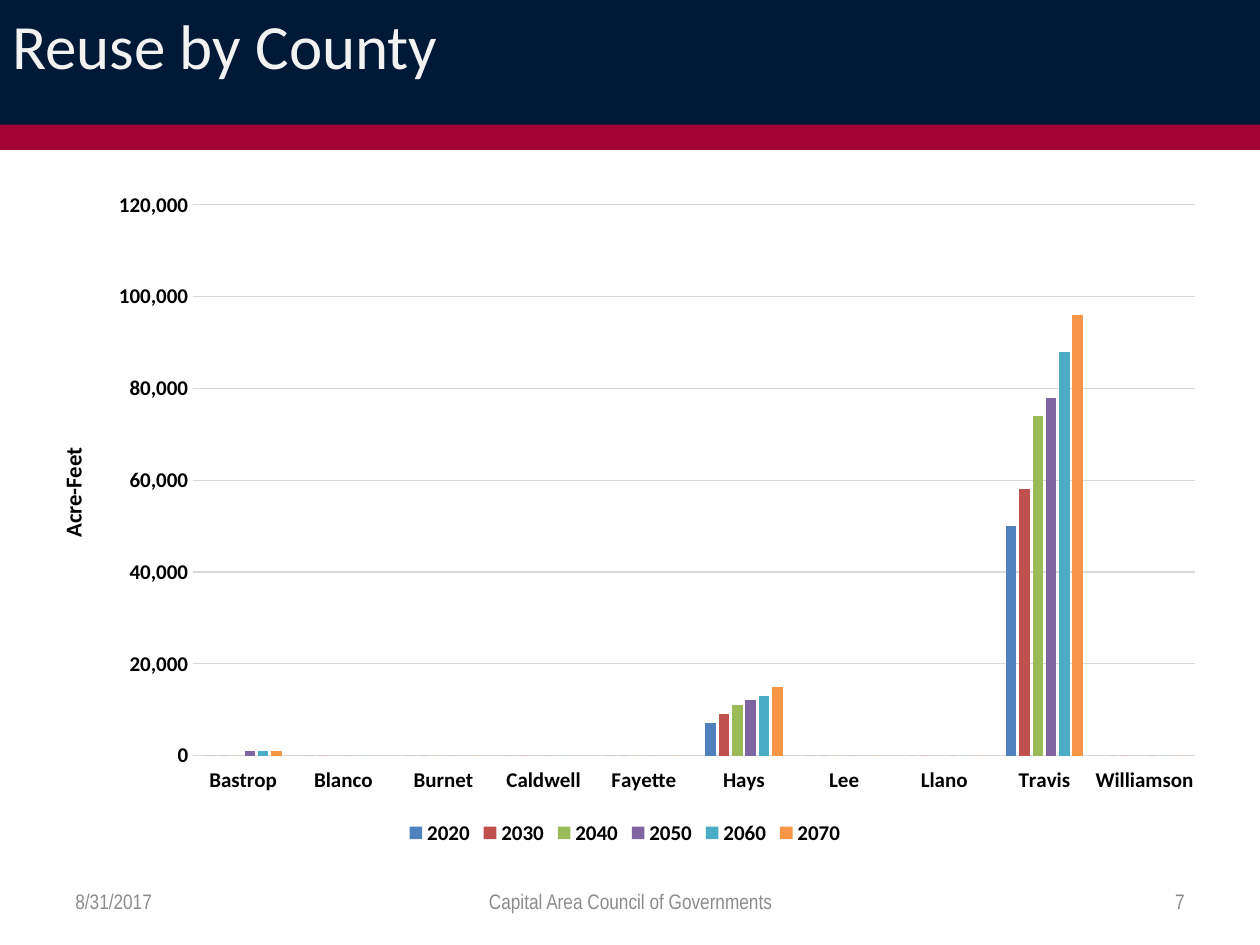
from dataclasses import dataclass

from lxml.etree import SubElement
from pptx import Presentation
from pptx.chart.data import CategoryChartData
from pptx.dml.color import RGBColor
from pptx.enum.chart import XL_CHART_TYPE, XL_LEGEND_POSITION, XL_TICK_LABEL_POSITION, XL_TICK_MARK
from pptx.enum.shapes import MSO_SHAPE
from pptx.enum.text import MSO_ANCHOR, PP_ALIGN
from pptx.oxml.ns import qn
from pptx.util import Inches, Pt


@dataclass(frozen=True)
class Theme:
    navy: str = "001936"
    crimson: str = "A30234"
    title: str = "F2F2F2"
    ink: str = "000000"
    footer: str = "8C8C8C"
    page: str = "898989"
    grid: str = "D9D9D9"
    series: tuple = ("4F81BD", "C0504D", "9BBB59", "8064A2", "4BACC6", "F79646")
    body_font: str = "Calibri"
    footer_font: str = "Arial Narrow"
    title_size: int = 36
    axis_title_size: int = 13
    label_size: int = 12
    base_size: int = 10


COUNTIES = ("Bastrop", "Blanco", "Burnet", "Caldwell", "Fayette",
            "Hays", "Lee", "Llano", "Travis", "Williamson")
REUSE = {
    "2020": {"Hays": 7000, "Travis": 50000},
    "2030": {"Hays": 9000, "Travis": 58000},
    "2040": {"Hays": 11000, "Travis": 74000},
    "2050": {"Bastrop": 1000, "Hays": 12000, "Travis": 78000},
    "2060": {"Bastrop": 1000, "Hays": 13000, "Travis": 88000},
    "2070": {"Bastrop": 1000, "Hays": 15000, "Travis": 96000},
}


class SlideBuilder:
    """Draws styled elements on the current slide."""

    def __init__(self, slide, theme):
        self.s = slide
        self.theme = theme

    def apply(self, target, values):
        for name, value in values.items():
            setattr(target, name, value)

    def font(self, font, size, color, name, bold=False):
        self.apply(font, {"size": Pt(size), "name": name, "bold": bold})
        font.color.rgb = RGBColor.from_string(color)

    def band(self, box, color):
        sp = self.s.shapes.add_shape(MSO_SHAPE.RECTANGLE, *map(Inches, box))
        sp.shadow.inherit = False
        sp.fill.solid()
        sp.fill.fore_color.rgb = RGBColor.from_string(color)
        sp.line.fill.background()

    def text(self, box, text, size, color, name, align=PP_ALIGN.LEFT, anchor=MSO_ANCHOR.MIDDLE):
        tf = self.s.shapes.add_textbox(*map(Inches, box)).text_frame
        self.apply(tf, {"word_wrap": True, "vertical_anchor": anchor})
        p = tf.paragraphs[0]
        p.alignment = align
        r = p.add_run()
        r.text = text
        self.font(r.font, size, color, name)

    def gray_line(self, line):
        line.color.rgb = RGBColor.from_string(self.theme.grid)
        line.width = Pt(0.75)

    def column_chart(self, box, categories, rows, axis_title):
        t = self.theme
        data = CategoryChartData(number_format="#,##0")
        data.categories = categories
        for name, values in rows.items():
            data.add_series(name, [values.get(c, 0) for c in categories])
        chart = self.s.shapes.add_chart(
            XL_CHART_TYPE.COLUMN_CLUSTERED, *map(Inches, box), data).chart
        self.font(chart.font, t.base_size, t.ink, t.body_font)
        self.apply(chart, {"has_title": False, "has_legend": True})
        self.apply(chart.legend, {"position": XL_LEGEND_POSITION.BOTTOM,
                                  "include_in_layout": False})

        plot = chart.plots[0]
        self.apply(plot, {"gap_width": 219, "overlap": -27, "vary_by_categories": False})
        for series, color in zip(plot.series, t.series):
            series.invert_if_negative = False
            series.format.fill.solid()
            series.format.fill.fore_color.rgb = RGBColor.from_string(color)

        cat, val = chart.category_axis, chart.value_axis
        for axis in (cat, val):
            self.apply(axis, {"major_tick_mark": XL_TICK_MARK.NONE,
                              "minor_tick_mark": XL_TICK_MARK.NONE})
        for labels in (cat.tick_labels, val.tick_labels, chart.legend):
            self.font(labels.font, t.label_size, t.ink, t.body_font, True)
        cat.tick_label_position = XL_TICK_LABEL_POSITION.LOW
        self.gray_line(cat.format.line)

        self.apply(val, {"minimum_scale": 0, "maximum_scale": 120000, "major_unit": 20000,
                         "has_major_gridlines": True})
        self.apply(val.tick_labels, {"number_format": "#,##0", "number_format_is_linked": False})
        val.format.line.fill.background()
        self.gray_line(val.major_gridlines.format.line)
        tf = val.axis_title.text_frame
        body = tf._txBody.find(qn("a:bodyPr"))
        body.set("rot", "-5400000")
        body.set("vert", "horz")
        r = tf.paragraphs[0].add_run()
        r.text = axis_title
        self.font(r.font, t.axis_title_size, t.ink, t.body_font, True)


def main():
    prs = Presentation()
    prs.slide_width, prs.slide_height = Inches(10), Inches(7.5)
    t = Theme()
    b = SlideBuilder(prs.slides.add_slide(prs.slide_layouts[6]), t)

    b.band((0, 0, 10, 1), t.navy)
    b.band((0, 0.99, 10, 0.2), t.crimson)
    b.text((0, 0, 8.5, 1), "Reuse by County", t.title_size, t.title, t.body_font,
           anchor=MSO_ANCHOR.TOP)
    b.column_chart((0.25, 1.42, 9.42, 5.33), COUNTIES, REUSE, "Acre-Feet")
    for left, width, text, color, align in (
        (0.5, 2.33, "8/31/2017", t.footer, PP_ALIGN.LEFT),
        (3.42, 3.17, "Capital Area Council of Governments", t.footer, PP_ALIGN.CENTER),
        (7.17, 2.33, "7", t.page, PP_ALIGN.RIGHT),
    ):
        b.text((left, 6.95, width, 0.4), text, t.label_size, color, t.footer_font, align)
    prs.save("out.pptx")


if __name__ == "__main__":
    main()
